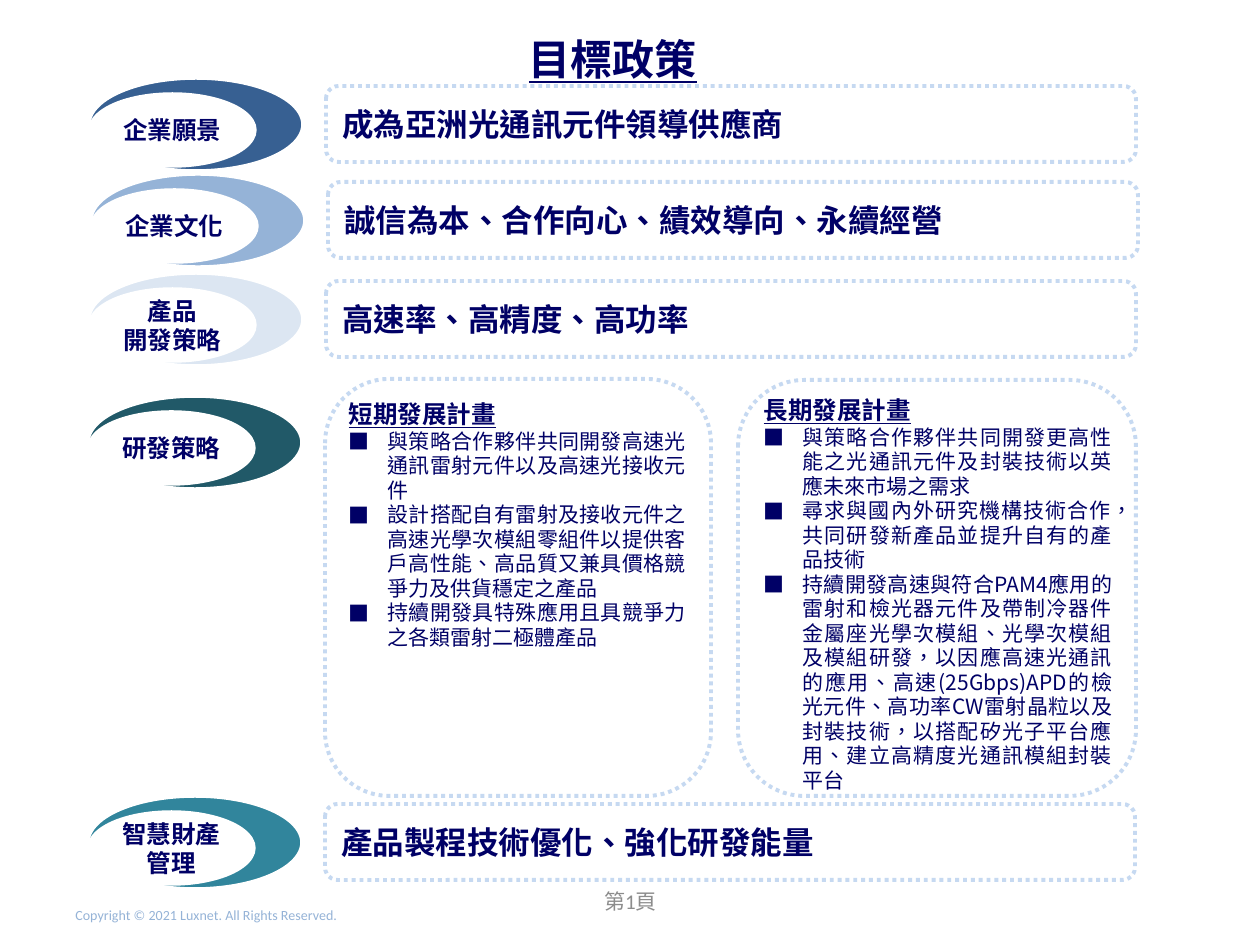
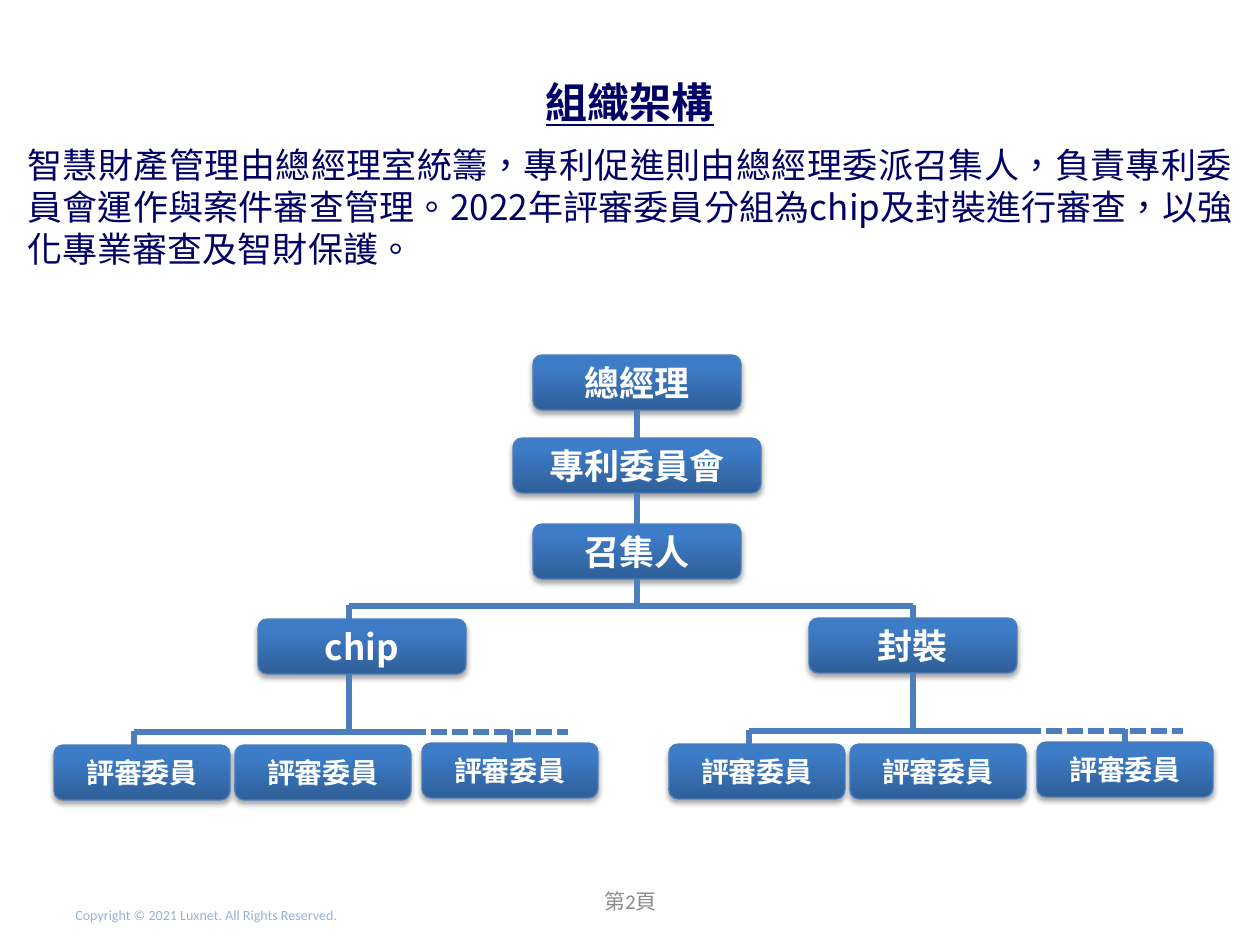
from lxml import etree
from pptx import Presentation
from pptx.dml.color import RGBColor
from pptx.enum.dml import MSO_LINE
from pptx.enum.shapes import MSO_CONNECTOR, MSO_SHAPE
from pptx.enum.text import MSO_ANCHOR, MSO_AUTO_SIZE, PP_ALIGN
from pptx.oxml.ns import qn
from pptx.util import Emu, Pt

SCALE = 914400 / 126
LEFT, CENTER, JUSTIFY = PP_ALIGN.LEFT, PP_ALIGN.CENTER, PP_ALIGN.JUSTIFY
TOP, MIDDLE = MSO_ANCHOR.TOP, MSO_ANCHOR.MIDDLE
NO_AUTOFIT = MSO_AUTO_SIZE.NONE
ELLIPSE, ROUNDED = MSO_SHAPE.OVAL, MSO_SHAPE.ROUNDED_RECTANGLE
STRAIGHT = MSO_CONNECTOR.STRAIGHT
SYS_DOT, SYS_DASH = MSO_LINE.ROUND_DOT, MSO_LINE.SQUARE_DOT
SITE_TOP, SITE_BOTTOM = 0, 2

CJK, LATIN = "Noto Sans CJK SC", "Calibri"
NAVY, WHITE, GREY = "000066", "FFFFFF", "8C8C8C"
COPYRIGHT_BLUE, DOTTED_BLUE = "95B3D7", "C6D9F1"
CHART_LINE, CHART_DARK, CHART_LIGHT = "4B7EBC", "2F5F99", "3D7CC7"

POLICIES = [
    (89, 78, "376092", ["企業願景"], "成為亞洲光通訊元件領導供應商"),
    (91, 174, "95B3D7", ["企業文化"], "誠信為本、合作向心、績效導向、永續經營"),
    (89, 273, "DCE6F2", ["產品", "開發策略"], "高速率、高精度、高功率"),
    (88, 396, "215968", ["研發策略"], None),
    (88, 796, "31859C", ["智慧財產管理"], "產品製程技術優化、強化研發能量"),
]
PLANS = [
    ((325, 379, 386, 417), (336, 391, 363, 277), "短期發展計畫", [
        "與策略合作夥伴共同開發高速光通訊雷射元件以及高速光接收元件",
        "設計搭配自有雷射及接收元件之高速光學次模組零組件以提供客戶高性能、高品質又兼具價格競爭力及供貨穩定之產品",
        "持續開發具特殊應用且具競爭力之各類雷射二極體產品",
    ]),
    ((738, 380, 398, 416), (751, 387, 374, 416), "長期發展計畫", [
        "與策略合作夥伴共同開發更高性能之光通訊元件及封裝技術以英應未來市場之需求",
        "尋求與國內外研究機構技術合作，共同研發新產品並提升自有的產品技術",
        "持續開發高速與符合PAM4應用的雷射和檢光器元件及帶制冷器件金屬座光學次模組、光學次模組及模組研發，"
        "以因應高速光通訊的應用、高速(25Gbps)APD的檢光元件、高功率CW雷射晶粒以及封裝技術，"
        "以搭配矽光子平台應用、建立高精度光通訊模組封裝平台",
    ]),
]
ORGANISATION = (
    "智慧財產管理由總經理室統籌，專利促進則由總經理委派召集人，負責專利委員會運作與案件審查管理。"
    "2022年評審委員分組為chip及封裝進行審查，以強化專業審查及智財保護。"
)


def px(n):
    return Emu(round(n * SCALE))


def rgb(value):
    return RGBColor.from_string(value)


def place(sp, x, y, w, h):
    sp.left, sp.top, sp.width, sp.height = px(x), px(y), px(w), px(h)


def setup_frame(tf, anchor, inset=None):
    tf.word_wrap = True
    tf.auto_size = NO_AUTOFIT
    tf.vertical_anchor = anchor
    if inset is not None:
        tf.margin_left = tf.margin_right = px(inset)
        tf.margin_top = tf.margin_bottom = px(inset)


def set_bullet(p, char=None, indent=0):
    pPr = p._p.get_or_add_pPr()
    pPr.set("marL", str(px(indent)))
    pPr.set("indent", str(-px(indent)))
    if char:
        etree.SubElement(pPr, qn("a:buFont")).set("typeface", CJK)
        etree.SubElement(pPr, qn("a:buChar")).set("char", char)
    else:
        etree.SubElement(pPr, qn("a:buNone"))


def add_run(p, text, size, color=NAVY, bold=False, underline=False, font=CJK):
    r = p.add_run()
    r.text = text
    r.font.name = font
    r.font.size = Pt(size)
    r.font.bold = bold
    r.font.underline = underline
    r.font.color.rgb = rgb(color)
    rPr = r._r.get_or_add_rPr()
    rPr.set("lang", "zh-TW")
    etree.SubElement(rPr, qn("a:ea")).set("typeface", CJK)


def add_text(tf, lines, size, align=LEFT, spacing=None, bullet=None, indent=0, **style):
    for text in lines:
        p = tf.paragraphs[0] if not tf.text else tf.add_paragraph()
        set_bullet(p, bullet, indent)
        p.alignment = align
        p.line_spacing = Pt(spacing or size * 1.2)
        p.space_before = Pt(0)
        add_run(p, text, size, **style)


def add_title(slide, text, x, y, w):
    sp = slide.shapes.title
    place(sp, x, y, w, 63)
    setup_frame(sp.text_frame, MIDDLE)
    add_text(sp.text_frame, [text], 24, CENTER, bold=True, underline=True)


def add_label(slide, text, box, size, color, align, anchor):
    sp = slide.shapes.add_textbox(*map(px, box))
    setup_frame(sp.text_frame, anchor)
    add_text(sp.text_frame, [text], size, align, color=color, font=LATIN)


def add_footer(slide, number):
    add_label(slide, "Copyright © 2021 Luxnet. All Rights Reserved.",
              (63, 900, 290, 30), 8, COPYRIGHT_BLUE, LEFT, TOP)
    add_label(slide, f"第{number}頁", (431, 876, 399, 50), 12, GREY, CENTER, MIDDLE)


def add_shape(slide, kind, box, line, width, fill=None):
    sp = slide.shapes.add_shape(kind, *map(px, box))
    sp.shadow.inherit = False
    if fill:
        sp.fill.solid()
        sp.fill.fore_color.rgb = rgb(fill)
    else:
        sp.fill.background()
    sp.line.color.rgb = rgb(line)
    sp.line.width = Pt(width)
    return sp


def add_crescent(slide, x, y, color, lines):
    add_shape(slide, ELLIPSE, (x, y, 214, 93), WHITE, 2, color)
    sp = add_shape(slide, ELLIPSE, (x + 1, y + 16, 165, 72), WHITE, 2, WHITE)
    setup_frame(sp.text_frame, MIDDLE, 6)
    add_text(sp.text_frame, lines, 14, CENTER, bold=True)


def add_dotted_box(slide, box):
    sp = add_shape(slide, ROUNDED, box, DOTTED_BLUE, 2.25)
    sp.line.dash_style = SYS_DOT
    return sp


def add_statement(slide, x, y, text):
    sp = add_dotted_box(slide, (x, y, 810, 76))
    setup_frame(sp.text_frame, MIDDLE)
    add_text(sp.text_frame, [text], 18, bold=True)


def add_plan(slide, sp, panel, box, heading, items):
    add_dotted_box(slide, panel)
    place(sp, *box)
    setup_frame(sp.text_frame, TOP)
    add_text(sp.text_frame, [heading], 14, spacing=18, bold=True, underline=True)
    add_text(sp.text_frame, items, 12, JUSTIFY, spacing=14, bullet="■", indent=39)


def add_soft_shadow(sp):
    effects = sp._element.spPr.find(qn("a:effectLst"))
    shadow = etree.SubElement(effects, qn("a:outerShdw"), blurRad=str(Pt(3.1)),
                              dist=str(Pt(1.8)), dir="5400000", rotWithShape="0")
    color = etree.SubElement(shadow, qn("a:srgbClr"), val="000000")
    etree.SubElement(color, qn("a:alpha"), val="35000")


def add_node(slide, text, x, y, w=208, size=20):
    sp = add_shape(slide, ROUNDED, (x, y, w, 55), CHART_LINE, 0.75)
    sp.fill.gradient()
    sp.fill.gradient_angle = 90
    for stop, color, position in zip(sp.fill.gradient_stops, (CHART_DARK, CHART_LIGHT), (0, 0.8)):
        stop.color.rgb = rgb(color)
        stop.position = position
    add_soft_shadow(sp)
    setup_frame(sp.text_frame, MIDDLE)
    add_text(sp.text_frame, [text], size, CENTER, color=WHITE, bold=True)
    return sp


def add_line(slide, x1, y1, x2, y2, above=None, below=None, dash=None):
    cxn = slide.shapes.add_connector(STRAIGHT, px(x1), px(y1), px(x2), px(y2))
    cxn.line.color.rgb = rgb(CHART_LINE)
    cxn.line.width = Pt(3)
    if dash:
        cxn.line.dash_style = dash
    etree.SubElement(cxn._element.spPr, qn("a:effectLst"))
    if above:
        cxn.begin_connect(above, SITE_BOTTOM)
    if below:
        cxn.end_connect(below, SITE_TOP)


def add_reviewers(slide, x, y):
    bus = y - 13
    for dx, dy in ((0, 0), (181, 0), (368, -2)):
        last = add_node(slide, "評審委員", x + dx, y + dy, 176, 16)
    add_line(slide, x + 80, bus, x + 356, bus)
    add_line(slide, x + 356, bus, x + 514, bus, dash=SYS_DASH)
    add_line(slide, x + 80, bus - 1, x + 80, y)
    add_line(slide, x + 456, bus - 2, x + 456, y - 2, below=last)
    return bus


def build_policy_slide(prs):
    slide = prs.slides.add_slide(prs.slide_layouts[3])
    add_title(slide, "目標政策", 91, 27, 1044)
    for x, y, color, lines, statement in POLICIES:
        add_crescent(slide, x, y, color, lines)
        if statement:
            add_statement(slide, x + 237, y + 8, statement)
    for idx, plan in enumerate(PLANS, 1):
        add_plan(slide, slide.placeholders[idx], *plan)
    add_footer(slide, 1)


def build_organisation_slide(prs):
    slide = prs.slides.add_slide(prs.slide_layouts[1])
    add_title(slide, "組織架構", 15, 70, 1230)
    body = slide.placeholders[1]
    place(body, 15, 137, 1230, 150)
    setup_frame(body.text_frame, TOP)
    add_text(body.text_frame, [ORGANISATION], 20, JUSTIFY)

    manager = add_node(slide, "總經理", 533, 355)
    committee = add_node(slide, "專利委員會", 513, 438, 248)
    convener = add_node(slide, "召集人", 533, 524)
    add_node(slide, "chip", 258, 619)
    packaging = add_node(slide, "封裝", 809, 618)
    add_line(slide, 637, 410, 637, 438, manager, committee)
    add_line(slide, 637, 493, 637, 524, committee, convener)
    add_line(slide, 637, 579, 637, 605, convener)
    add_line(slide, 349, 606, 913, 606)
    add_line(slide, 349, 605, 349, 619)
    add_line(slide, 913, 605, 913, 618, below=packaging)

    chip_bus = add_reviewers(slide, 54, 745)
    add_line(slide, 349, 674, 349, chip_bus)
    packaging_bus = add_reviewers(slide, 669, 744)
    add_line(slide, 913, 673, 913, packaging_bus, packaging)
    add_footer(slide, 2)


def main():
    prs = Presentation()
    prs.slide_width, prs.slide_height = px(1260), px(945)
    build_policy_slide(prs)
    build_organisation_slide(prs)
    prs.save("out.pptx")


if __name__ == "__main__":
    main()
